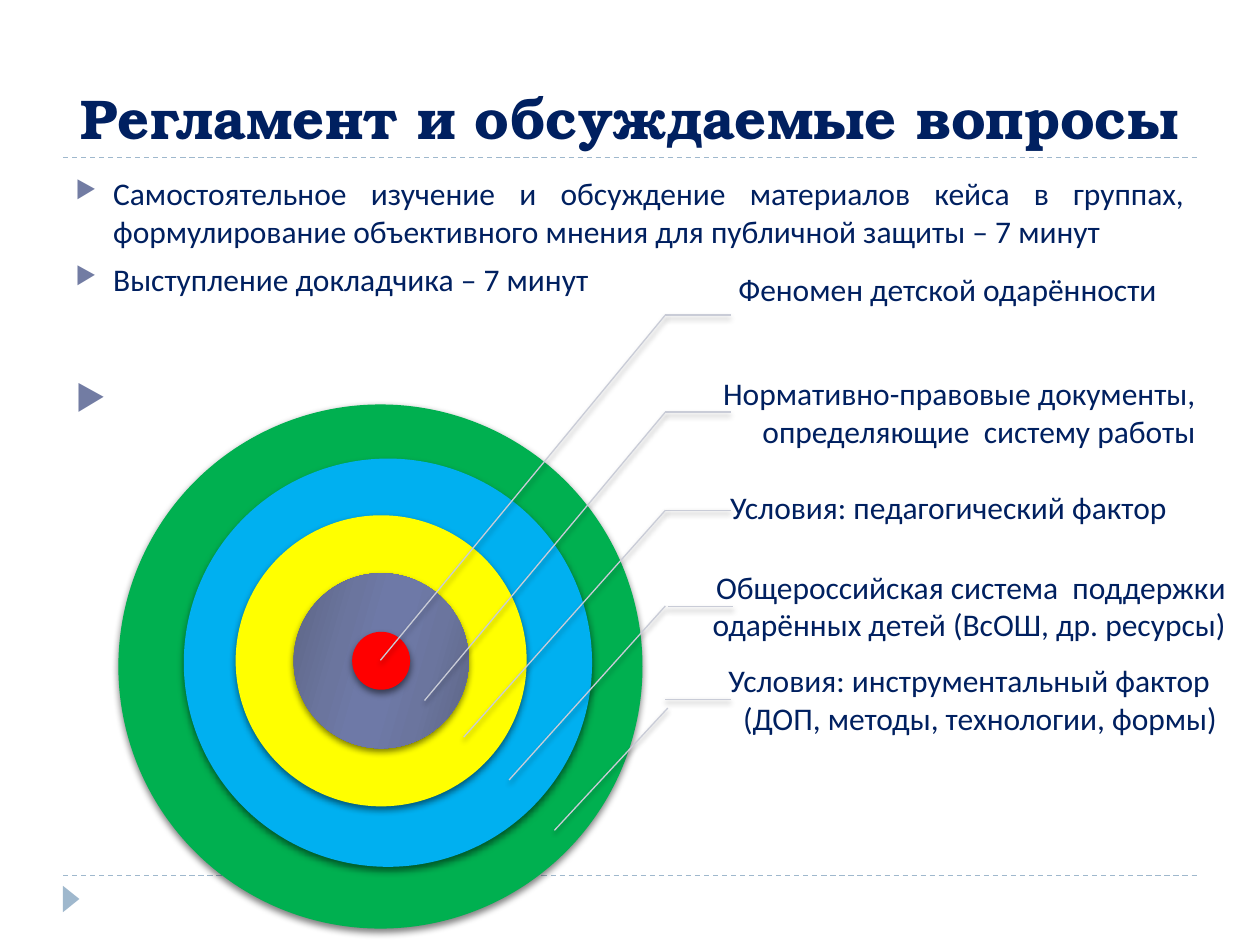
from dataclasses import dataclass

from lxml.etree import SubElement
from pptx import Presentation
from pptx.dml.color import RGBColor
from pptx.enum.dml import MSO_LINE_DASH_STYLE as Dash
from pptx.enum.shapes import MSO_CONNECTOR as Connector, MSO_SHAPE as Shape
from pptx.enum.text import MSO_ANCHOR as Anchor, PP_ALIGN as Align
from pptx.oxml.ns import qn
from pptx.util import Pt


@dataclass(frozen=True)
class Theme:
    ink: str = "002060"
    rule: str = "9FB8CD"
    bullet: str = "727CA3"
    leader: str = "C9CCD7"
    green: str = "00B050"
    blue: str = "00B0F0"
    yellow: str = "FFFF00"
    red: str = "FF0000"
    slate: tuple = ((0, "5D6585"), (30, "6B759E"), (45, "6E79A7"),
                    (55, "6E79A7"), (73, "6B759E"), (100, "5D6585"))
    title_font: str = "TeX Gyre Bonum"
    body_font: str = "Calibri"
    title_size: int = 32
    body_size: int = 18
    marker_size: int = 26


THEME = Theme()
ELBOW_X, SHELF_END = 380.2, 417.6

# text, alignment, size, space before
BULLETS = [
    ("Самостоятельное изучение и обсуждение материалов кейса в группах, "
     "формулирование объективного мнения для публичной защиты – 7 минут",
     Align.JUSTIFY, THEME.body_size, 6),
    ("Выступление докладчика – 7 минут", Align.JUSTIFY, THEME.body_size, 6),
    (" ", Align.LEFT, THEME.marker_size, 44),
]

# centre x, centre y, diameter, fill
RINGS = [
    (217.4, 380.9, 299.5, THEME.green),
    (221.7, 378.7, 233.3, THEME.blue),
    (217.8, 377.6, 166.3, THEME.yellow),
    (217.8, 377.6, 100.1, THEME.slate),
    (217.8, 377.6, 33.1, THEME.red),
]

# lines, text box, line spacing, shelf (x shift, y), leader start, leader tip
LABELS = [
    (["Феномен детской одарённости"], (355, 140.4, 308.2, 52.6), 0.9,
     (0, 180), (ELBOW_X, 180), (217.4, 377.3)),
    (["Нормативно-правовые документы,", "определяющие  систему работы"],
     (298.8, 218.2, 386.6, 34.6), 1,
     (0, 235.5), (ELBOW_X, 235.5), (242.6, 400.3)),
    (["Условия: педагогический фактор"], (315.4, 265, 353.5, 52.6), 0.9,
     (0, 291.6), (ELBOW_X, 291.6), (265, 421.2)),
    (["Общероссийская система  поддержки",
      "одарённых детей (ВсОШ, др. ресурсы)"],
     (282.2, 319.7, 420.5, 52.6), 1,
     (1.4, 346.7), (ELBOW_X, 346.3), (290.9, 445.7)),
    (["Условия: инструментальный фактор ", "(ДОП, методы, технологии, формы)"],
     (287.3, 323.3, 410.4, 151.9), 1,
     (0, 399.6), (381.6, 404.6), (316.8, 474.5)),
]


def color(code):
    return RGBColor.from_string(code)


def points(*lengths):
    return [Pt(length) for length in lengths]


def write(para, text, *, size=THEME.body_size, font=THEME.body_font, bold=False,
          align=Align.LEFT, spacing=1, before=0):
    para.alignment, para.line_spacing = align, spacing
    para.space_before, para.space_after = Pt(before), Pt(0)
    span = para.add_run()
    span.text = text
    span.font.size, span.font.name, span.font.bold = Pt(size), font, bold
    span.font.color.rgb = color(THEME.ink)


def add_bullet(para):
    props = para._p.get_or_add_pPr()
    props.set("marL", str(Pt(21.6)))
    props.set("indent", str(-Pt(21.6)))
    tint = SubElement(props, qn("a:buClr"))
    SubElement(tint, qn("a:srgbClr"), val=THEME.bullet)
    SubElement(props, qn("a:buSzPct"), val="76000")
    SubElement(props, qn("a:buChar"), char="▶")


def set_effects(shape, alpha=0, blur=0):
    """Give a soft shadow below the shape, or none when alpha is zero."""
    effects = SubElement(shape._element.spPr, qn("a:effectLst"))
    if alpha:
        shadow = SubElement(effects, qn("a:outerShdw"), blurRad=str(Pt(blur)),
                            dist=str(Pt(2)), dir="5400000", rotWithShape="0")
        black = SubElement(shadow, qn("a:srgbClr"), val="000000")
        SubElement(black, qn("a:alpha"), val=str(alpha * 1000))


def add_line(page, start, end, tint, dash=None, alpha=0):
    line = page.shapes.add_connector(Connector.STRAIGHT, *points(*start, *end))
    line.line.color.rgb = color(tint)
    line.line.width = Pt(0.75)
    if dash:
        line.line.dash_style = dash
    set_effects(line, alpha, 3)


def add_filled(page, kind, frame, fill, alpha=0):
    shape = page.shapes.add_shape(kind, *points(*frame))
    if isinstance(fill, str):
        shape.fill.solid()
        shape.fill.fore_color.rgb = color(fill)
    else:
        shape.fill.gradient()
        shape.fill.gradient_angle = 344
        stops = next(shape._element.spPr.iter(qn("a:gsLst")))
        stops.clear()
        for position, tint in fill:
            stop = SubElement(stops, qn("a:gs"), pos=str(position * 1000))
            SubElement(stop, qn("a:srgbClr"), val=tint)
    shape.line.fill.background()
    set_effects(shape, alpha, 4)
    return shape


def add_text_box(page, frame, anchor, insets):
    box = page.shapes.add_textbox(*points(*frame)).text_frame
    box.word_wrap, box.vertical_anchor = True, anchor
    (box.margin_left, box.margin_top,
     box.margin_right, box.margin_bottom) = points(*insets)
    return box


def next_para(box, index):
    return box.add_paragraph() if index else box.paragraphs[0]


def add_title(page, text):
    title = page.shapes.title
    title.left, title.top, title.width, title.height = points(36, 12.2, 648, 77.8)
    title.text_frame.vertical_anchor = Anchor.BOTTOM
    write(title.text_frame.paragraphs[0], text, size=THEME.title_size,
          font=THEME.title_font, bold=True, align=Align.CENTER)


def add_bullets(page):
    box = add_text_box(page, (36, 95.8, 648, 388.8), Anchor.TOP, (7.2, 3.6, 7.2, 3.6))
    for index, (text, align, size, before) in enumerate(BULLETS):
        para = next_para(box, index)
        write(para, text, size=size, align=align, before=before)
        add_bullet(para)


def add_label(page, lines, frame, spacing, shelf, start, tip):
    box = add_text_box(page, frame, Anchor.MIDDLE, (10, 2.2, 2.2, 2.2))
    for index, text in enumerate(lines):
        write(next_para(box, index), text, align=Align.RIGHT, spacing=spacing)
    shift, y = shelf
    add_line(page, (ELBOW_X + shift, y), (SHELF_END + shift, y), THEME.leader, alpha=40)
    add_line(page, start, tip, THEME.leader, alpha=40)


def main():
    deck = Presentation()
    deck.slide_width, deck.slide_height = points(720, 540)
    page = deck.slides.add_slide(deck.slide_layouts[5])

    # Frame of the page: dashed rules and corner marker
    for y in (90, 500.4):
        add_line(page, (36, y), (684, y), THEME.rule, Dash.DASH)
    marker = add_filled(page, Shape.ISOSCELES_TRIANGLE, (33.1, 509, 15.1, 9.4), THEME.rule)
    marker.rotation = 90

    # Title and agenda
    add_title(page, "Регламент и обсуждаемые вопросы")
    add_bullets(page)

    # Target of concentric rings
    for x, y, size, fill in RINGS:
        add_filled(page, Shape.OVAL, (x - size / 2, y - size / 2, size, size), fill, alpha=50)

    # Labels with their leaders
    for label in LABELS:
        add_label(page, *label)

    deck.save("out.pptx")


if __name__ == "__main__":
    main()
